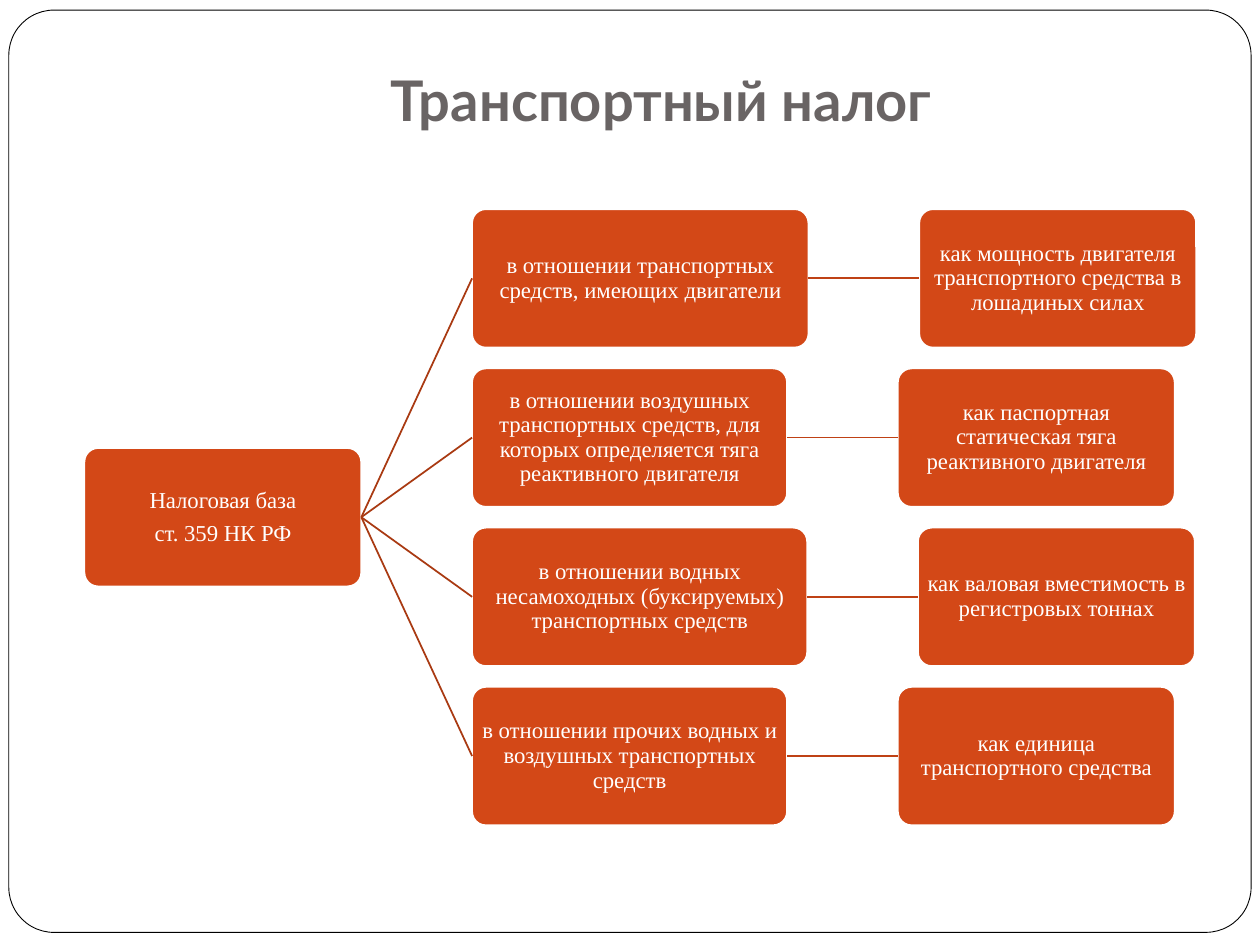
from dataclasses import dataclass

import lxml.etree
import pptx
import pptx.dml.color
import pptx.enum.shapes
import pptx.enum.text
import pptx.oxml.ns
import pptx.util


@dataclass(frozen=True)
class Theme:
    background: str = "FFFFFF"
    frame_line: str = "000000"
    title: str = "696464"
    box: str = "D34817"
    box_text: str = "FFFFFF"
    branch_line: str = "A93A12"
    link_line: str = "BF4115"
    title_font: str = "Lato"
    box_font: str = "Times New Roman"
    title_size: float = 32
    box_size: float = 13
    paragraph_gap: float = 4.7


@dataclass(frozen=True)
class Box:
    """A region in inches."""
    left: float
    top: float
    width: float
    height: float

    def lengths(self):
        return [pptx.util.Inches(value)
                for value in (self.left, self.top, self.width, self.height)]


THEME = Theme()
SLIDE_WIDTH, SLIDE_HEIGHT = 10, 7.5
ROOT_TEXT = "Налоговая база\nст. 359 НК РФ"
# Subject of taxation, width of its box, tax base
BRANCHES = [
    ("в отношении транспортных средств, имеющих двигатели", 2.67,
     "как мощность двигателя транспортного средства в лошадиных силах"),
    ("в отношении воздушных транспортных средств, для которых определяется "
     "тяга реактивного двигателя", 2.5,
     "как паспортная статическая тяга реактивного двигателя"),
    ("в отношении водных несамоходных (буксируемых) транспортных средств", 2.66,
     "как валовая вместимость в регистровых тоннах"),
    ("в отношении прочих водных и воздушных транспортных средств", 2.5,
     "как единица транспортного средства"),
]


def color(value):
    return pptx.dml.color.RGBColor.from_string(value)


def format_text(text_frame, font_name, size, font_color, bold=False):
    for paragraph in text_frame.paragraphs:
        paragraph.alignment = pptx.enum.text.PP_ALIGN.CENTER
        for run in paragraph.runs:
            run.font.name = font_name
            run.font.size = pptx.util.Pt(size)
            run.font.bold = bold
            run.font.color.rgb = color(font_color)


def add_rounded(slide, box, radius, fill, line, line_width):
    shape = slide.shapes.add_shape(
        pptx.enum.shapes.MSO_SHAPE.ROUNDED_RECTANGLE, *box.lengths())
    shape.adjustments[0] = radius
    shape.shadow.inherit = False
    shape.fill.solid()
    shape.fill.fore_color.rgb = color(fill)
    shape.line.color.rgb = color(line)
    shape.line.width = pptx.util.Pt(line_width)
    return shape


def add_node(slide, box, text):
    shape = add_rounded(slide, box, 0.1, THEME.box, THEME.background, 1)
    text_frame = shape.text_frame
    text_frame.text = text
    text_frame.word_wrap = True
    text_frame.vertical_anchor = pptx.enum.text.MSO_ANCHOR.MIDDLE
    inset = pptx.util.Inches(0.04)
    text_frame.margin_left = text_frame.margin_right = inset
    text_frame.margin_top = text_frame.margin_bottom = inset
    format_text(text_frame, THEME.box_font, THEME.box_size, THEME.box_text)
    for paragraph in text_frame.paragraphs:
        paragraph.line_spacing = 0.9
        paragraph.space_after = pptx.util.Pt(THEME.paragraph_gap)
    return shape


def join(slide, start, end, line_color):
    """Connect the right side of one node to the left side of another."""
    connector = slide.shapes.add_connector(
        pptx.enum.shapes.MSO_CONNECTOR.STRAIGHT, 0, 0, 0, 0)
    connector.begin_connect(start, 3)
    connector.end_connect(end, 1)
    connector.line.color.rgb = color(line_color)
    connector.line.width = pptx.util.Pt(1)
    lxml.etree.SubElement(connector._element.spPr,
                          pptx.oxml.ns.qn("a:effectLst"))


def add_title(slide, box, text):
    text_frame = slide.shapes.add_textbox(*box.lengths()).text_frame
    text_frame.text = text
    text_frame.word_wrap = True
    text_frame.vertical_anchor = pptx.enum.text.MSO_ANCHOR.BOTTOM
    text_frame.margin_bottom = pptx.util.Inches(0.1)
    format_text(text_frame, THEME.title_font, THEME.title_size, THEME.title, True)


def add_tree(slide, box):
    # Rows are separated by 15 % of a node's height, levels by 40 % of its width
    row_count = len(BRANCHES)
    node_height = box.height / (row_count + 0.15 * (row_count - 1))
    row_pitch = 1.15 * node_height
    node_width = 2 * node_height
    level_gap = 0.4 * node_width

    # Root, centred on the rows
    root_top = box.top + (box.height - node_height) / 2
    root = add_node(slide, Box(box.left, root_top, node_width, node_height),
                    ROOT_TEXT)

    # One row for each branch
    subject_left = box.left + node_width + level_gap
    for row, (subject_text, subject_width, base_text) in enumerate(BRANCHES):
        top = box.top + row * row_pitch
        subject = add_node(
            slide, Box(subject_left, top, subject_width, node_height), subject_text)
        base_left = subject_left + subject_width + level_gap
        base = add_node(
            slide, Box(base_left, top, node_width, node_height), base_text)
        join(slide, root, subject, THEME.branch_line)
        join(slide, subject, base, THEME.link_line)


def main():
    presentation = pptx.Presentation()
    presentation.slide_width = pptx.util.Inches(SLIDE_WIDTH)
    presentation.slide_height = pptx.util.Inches(SLIDE_HEIGHT)
    slide = presentation.slides.add_slide(presentation.slide_layouts[6])

    # Page frame
    margin = 0.07
    frame = Box(margin, margin + 0.01, SLIDE_WIDTH - 2 * margin, 7.32)
    add_rounded(slide, frame, 0.049, THEME.background, THEME.frame_line, 0.5)

    # Title and tree
    add_title(slide, Box(0.1 * SLIDE_WIDTH, 0.04 * SLIDE_HEIGHT,
                         0.85 * SLIDE_WIDTH, 0.85), "Транспортный налог")
    add_tree(slide, Box(0.67, 1.66, 8.83, 4.89))

    presentation.save("out.pptx")


if __name__ == "__main__":
    main()
